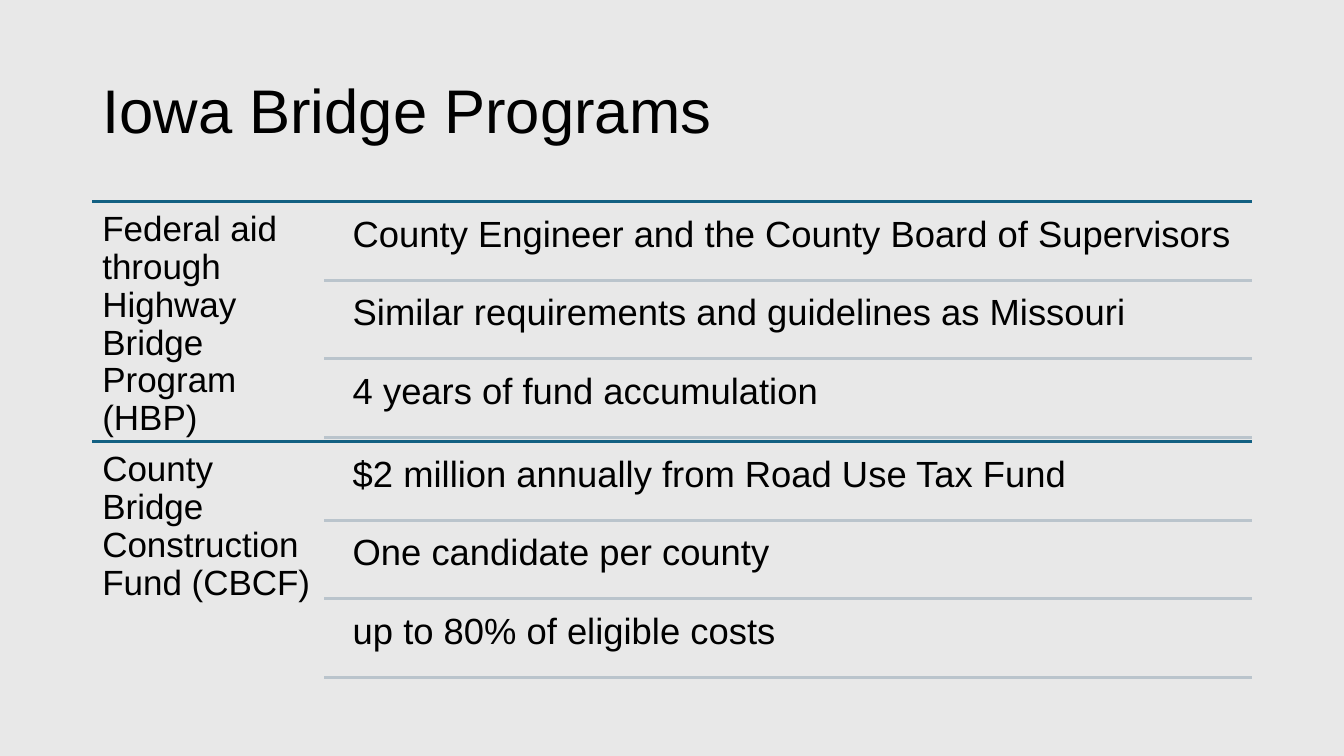
from dataclasses import dataclass

from lxml import etree
from pptx import Presentation
from pptx.dml.color import RGBColor
from pptx.enum.shapes import MSO_CONNECTOR
from pptx.enum.text import MSO_ANCHOR
from pptx.oxml.ns import qn
from pptx.slide import Slide
from pptx.util import Cm, Pt

STRAIGHT = MSO_CONNECTOR.STRAIGHT
TOP = MSO_ANCHOR.TOP
MIDDLE = MSO_ANCHOR.MIDDLE

BACKGROUND = RGBColor(0xE8, 0xE8, 0xE8)
BLACK = RGBColor(0x00, 0x00, 0x00)
TEAL = RGBColor(0x12, 0x60, 0x82)
GREY = RGBColor(0xBA, 0xC4, 0xCC)

FONT = "Arial"
LEFT, RIGHT = 2.33, 31.55
NAME_WIDTH = 5.84
RULE_LEFT = LEFT + NAME_WIDTH
DETAIL_LEFT, DETAIL_HEIGHT = 8.61, 1.88
FIRST_TOP, PROGRAM_HEIGHT = 5.08, 6.05
DETAIL_GAP, DETAIL_PITCH = 0.08, 1.98


@dataclass(frozen=True)
class Program:
    name: str
    details: tuple[str, ...]


@dataclass(frozen=True)
class Box:
    left: float
    top: float
    width: float
    height: float


PROGRAMS = (
    Program(
        "Federal aid through Highway Bridge Program (HBP)",
        (
            "County Engineer and the County Board of Supervisors",
            "Similar requirements and guidelines as Missouri",
            "4 years of fund accumulation",
        ),
    ),
    Program(
        "County Bridge Construction Fund (CBCF)",
        (
            "$2 million annually from Road Use Tax Fund",
            "One candidate per county",
            "up to 80% of eligible costs",
        ),
    ),
)


def add_text(s: Slide, text: str, box: Box, size: int, inset_x: float,
             inset_y: float, anchor: MSO_ANCHOR = TOP) -> None:
    sp = s.shapes.add_textbox(Cm(box.left), Cm(box.top), Cm(box.width), Cm(box.height))
    tf = sp.text_frame
    tf.word_wrap = True
    tf.vertical_anchor = anchor
    tf.margin_left = tf.margin_right = Cm(inset_x)
    tf.margin_top = tf.margin_bottom = Cm(inset_y)
    p = tf.paragraphs[0]
    p.text = text
    p.line_spacing = 0.9
    p.font.name = FONT
    p.font.size = Pt(size)
    p.font.color.rgb = BLACK


def add_rule(s: Slide, left: float, y: float, color: RGBColor) -> None:
    line = s.shapes.add_connector(STRAIGHT, Cm(left), Cm(y), Cm(RIGHT), Cm(y))
    line.line.color.rgb = color
    line.line.width = Pt(2)
    etree.SubElement(line._element.spPr, qn("a:effectLst"))


def add_program(s: Slide, program: Program, top: float) -> None:
    add_rule(s, LEFT, top, TEAL)
    add_text(s, program.name, Box(LEFT, top, NAME_WIDTH, PROGRAM_HEIGHT), 25, 0.25, 0.25)
    for i, detail in enumerate(program.details):
        y = top + i * DETAIL_PITCH
        box = Box(DETAIL_LEFT, y + DETAIL_GAP, RIGHT - DETAIL_LEFT, DETAIL_HEIGHT)
        add_text(s, detail, box, 26, 0.28, 0.28)
        add_rule(s, RULE_LEFT, y + DETAIL_PITCH, GREY)


def main() -> None:
    prs = Presentation()
    prs.slide_width, prs.slide_height = Cm(33.87), Cm(19.05)
    s = prs.slides.add_slide(prs.slide_layouts[6])
    s.background.fill.solid()
    s.background.fill.fore_color.rgb = BACKGROUND
    title_box = Box(LEFT, 1.01, RIGHT - LEFT, 3.68)
    add_text(s, "Iowa Bridge Programs", title_box, 44, 0.25, 0.13, MIDDLE)
    for i, program in enumerate(PROGRAMS):
        add_program(s, program, FIRST_TOP + i * PROGRAM_HEIGHT)
    prs.save("out.pptx")


if __name__ == "__main__":
    main()
